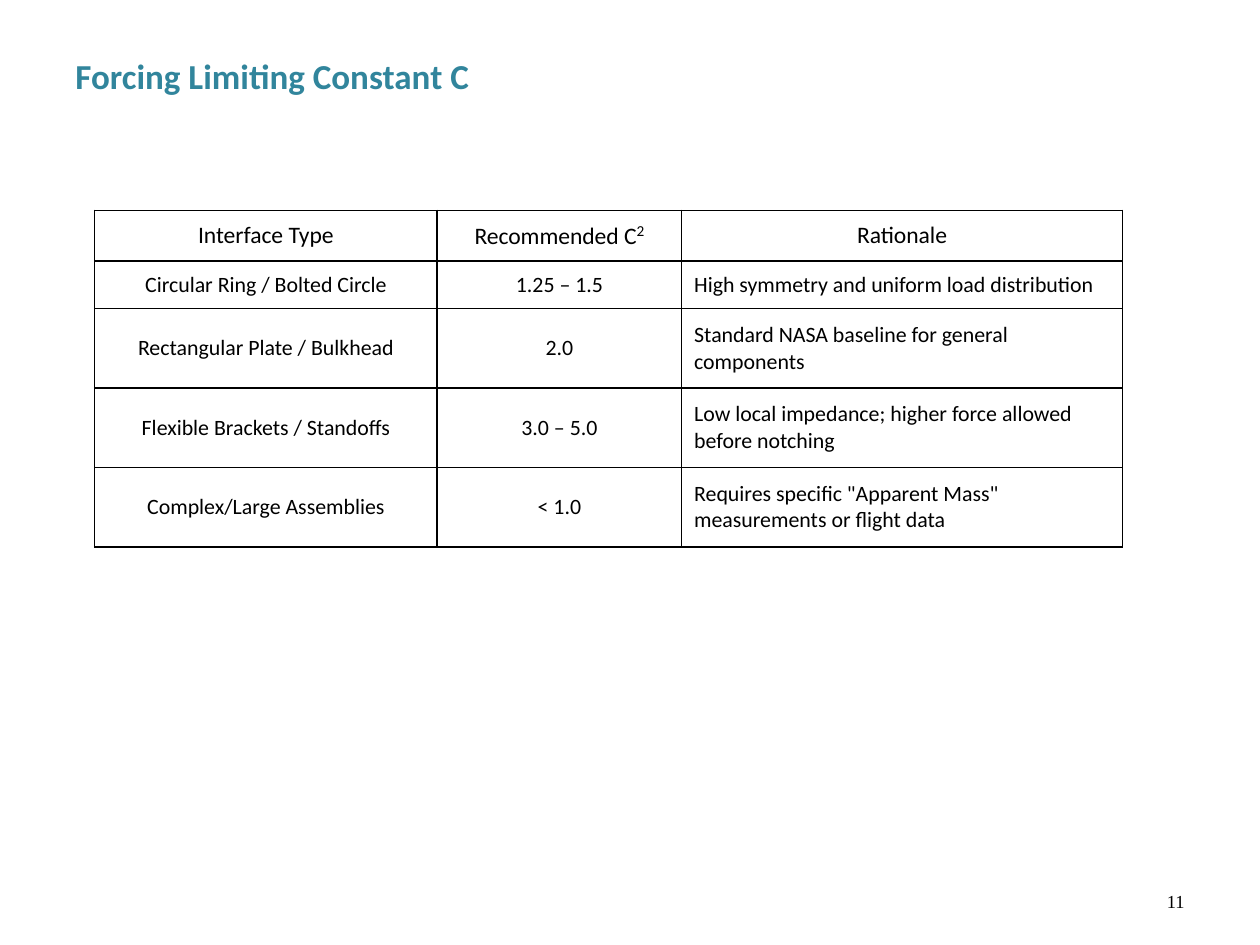
from dataclasses import dataclass

from lxml.etree import SubElement
from pptx import Presentation
from pptx.dml.color import RGBColor
from pptx.enum.text import MSO_ANCHOR as Anchor, PP_ALIGN as Align
from pptx.oxml.ns import qn
from pptx.util import Inches, Pt


@dataclass(frozen=True)
class Theme:
    title_color: str = "31859C"
    text_color: str = "000000"
    number_color: str = "010000"
    cell_fill: str = "FFFFFF"
    body_font: str = "Calibri"
    number_font: str = "Times New Roman"
    title_size: float = 20
    header_size: float = 13.5
    superscript_size: float = 15
    body_size: float = 12.5
    number_size: float = 10.5
    border_width: float = 1


THEME = Theme()
COLUMN_WIDTHS = [2.72, 1.94, 3.5]
ROW_HEIGHTS = [0.4, 0.38, 0.63, 0.63, 0.63]
HEADERS = ["Interface Type", "Recommended C", "Rationale"]
INTERFACES = [
    ("Circular Ring / Bolted Circle", "1.25 – 1.5",
     "High symmetry and uniform load distribution"),
    ("Rectangular Plate / Bulkhead", "2.0",
     "Standard NASA baseline for general components"),
    ("Flexible Brackets / Standoffs", "3.0 – 5.0",
     "Low local impedance; higher force allowed before notching"),
    ("Complex/Large Assemblies", "< 1.0",
     'Requires specific "Apparent Mass" measurements or flight data'),
]


def style_run(run, size, color=THEME.text_color, name=THEME.body_font, bold=False):
    run.font.size = Pt(size)
    run.font.name = name
    run.font.bold = bold
    run.font.color.rgb = RGBColor.from_string(color)


def add_text(slide, box, text, anchor, align):
    """Place one line of text and return its paragraph."""
    text_frame = slide.shapes.add_textbox(*map(Inches, box)).text_frame
    text_frame.word_wrap = True
    text_frame.vertical_anchor = anchor
    text_frame.text = text
    paragraph = text_frame.paragraphs[0]
    paragraph.alignment = align
    return paragraph


def add_title(slide, box, text):
    paragraph = add_text(slide, box, text, Anchor.TOP, Align.LEFT)
    paragraph.space_after = Pt(1.5)
    style_run(paragraph.runs[0], THEME.title_size, THEME.title_color, bold=True)


def add_page_number(slide, box, text):
    paragraph = add_text(slide, box, text, Anchor.MIDDLE, Align.RIGHT)
    style_run(paragraph.runs[0], THEME.number_size, THEME.number_color, THEME.number_font)


def add_borders(cell):
    properties = cell._tc.get_or_add_tcPr()
    for side in ("a:lnL", "a:lnR", "a:lnT", "a:lnB"):
        line = SubElement(properties, qn(side), w=str(Pt(THEME.border_width)))
        fill = SubElement(line, qn("a:solidFill"))
        SubElement(fill, qn("a:srgbClr"), val=THEME.text_color)


def fill_cell(cell, text, size, align):
    add_borders(cell)
    cell.fill.solid()
    cell.fill.fore_color.rgb = RGBColor.from_string(THEME.cell_fill)
    cell.vertical_anchor = Anchor.MIDDLE
    cell.text = text
    paragraph = cell.text_frame.paragraphs[0]
    paragraph.alignment = align
    style_run(paragraph.runs[0], size)


def add_superscript(paragraph, text):
    run = paragraph.add_run()
    run.text = text
    style_run(run, THEME.superscript_size)
    run._r.get_or_add_rPr().set("baseline", "30000")


def add_interface_table(slide, left, top):
    size = (sum(COLUMN_WIDTHS), sum(ROW_HEIGHTS))
    table = slide.shapes.add_table(
        len(ROW_HEIGHTS), len(COLUMN_WIDTHS), *map(Inches, (left, top, *size))
    ).table
    table.first_row = table.horz_banding = False
    for column, width in zip(table.columns, COLUMN_WIDTHS):
        column.width = Inches(width)
    for row, height in zip(table.rows, ROW_HEIGHTS):
        row.height = Inches(height)

    # Header row
    for cell, text in zip(table.rows[0].cells, HEADERS):
        fill_cell(cell, text, THEME.header_size, Align.CENTER)
    add_superscript(table.cell(0, 1).text_frame.paragraphs[0], "2")

    # One row per interface type, with the rationale aligned left
    alignments = (Align.CENTER, Align.CENTER, Align.LEFT)
    for row_index, texts in enumerate(INTERFACES, start=1):
        for cell, text, align in zip(table.rows[row_index].cells, texts, alignments):
            fill_cell(cell, text, THEME.body_size, align)


def main():
    presentation = Presentation()
    presentation.slide_width = Inches(10)
    presentation.slide_height = Inches(7.5)
    slide = presentation.slides.add_slide(presentation.slide_layouts[6])
    add_page_number(slide, (7.17, 6.95, 2.33, 0.4), "11")
    add_title(slide, (0.5, 0.38, 3.75, 0.44), "Forcing Limiting Constant C")
    add_interface_table(slide, 0.75, 1.67)
    presentation.save("out.pptx")


if __name__ == "__main__":
    main()
